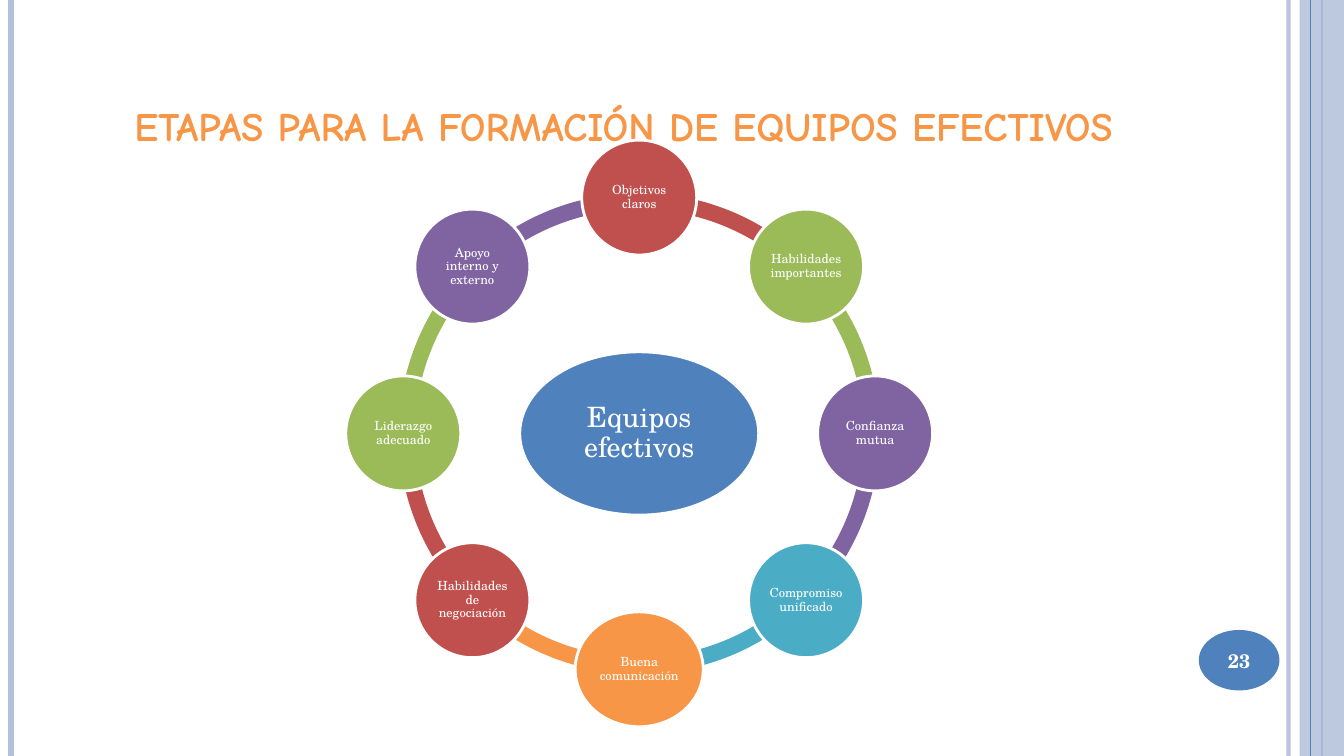
from math import cos, radians, sin

from lxml.etree import SubElement
from pptx import Presentation
from pptx.dml.color import RGBColor
from pptx.enum.shapes import MSO_CONNECTOR, MSO_SHAPE
from pptx.enum.text import MSO_ANCHOR, PP_ALIGN
from pptx.oxml.ns import qn
from pptx.util import Inches, Pt

WHITE = RGBColor(0xFF, 0xFF, 0xFF)
BLUE = RGBColor(0x4F, 0x81, 0xBD)
PALE_BLUE = RGBColor(0xB3, 0xC1, 0xDB)
RED = RGBColor(0xC0, 0x50, 0x4D)
GREEN = RGBColor(0x9B, 0xBB, 0x59)
PURPLE = RGBColor(0x80, 0x64, 0xA2)
TEAL = RGBColor(0x4B, 0xAC, 0xC6)
ORANGE = RGBColor(0xF7, 0x96, 0x46)
SERIF, COMIC = "TeX Gyre Schola", "Comic Neue"

TITLE = "etapas para la formación de equipos efectivos"
GOAL = "Equipos efectivos"
PAGE = "23"
STAGES = [
    ("Objetivos claros", RED, 1.14),
    ("Habilidades importantes", GREEN, 1.14),
    ("Confianza mutua", PURPLE, 1.14),
    ("Compromiso unificado", TEAL, 1.14),
    ("Buena comunicación", ORANGE, 1.27),
    ("Habilidades de negociación", RED, 1.14),
    ("Liderazgo adecuado", GREEN, 1.14),
    ("Apoyo interno y externo", PURPLE, 1.14),
]
BACK_STRIPES = [(12.78, PALE_BLUE, 3, 93), (0.11, PALE_BLUE, 4.5, 100), (13.11, BLUE, 1.5, 100)]
FRONT_STRIPES = [(13, BLUE, 0.75, 100)]

WIDTH, HEIGHT = 13.33, 7.5
CENTER_X, CENTER_Y = 6.34, 4.3
ORBIT, RING_SIZE, STAGE_HEIGHT = 2.34, 4.77, 1.14
FULL_TURN, TOP = 216, 162
STEP = FULL_TURN / len(STAGES)

deck = Presentation()
deck.slide_width, deck.slide_height = Inches(WIDTH), Inches(HEIGHT)
slide = deck.slides.add_slide(deck.slide_layouts[6])
shapes = slide.shapes


def set_opacity(shape, percent):
    color = next(shape._element.spPr.iter(qn("a:srgbClr")))
    SubElement(color, qn("a:alpha")).set("val", str(percent * 1000))


def add_stripe(x, color, weight, opacity):
    stripe = shapes.add_connector(MSO_CONNECTOR.STRAIGHT, Inches(x), 0, Inches(x), Inches(HEIGHT))
    stripe.line.color.rgb = color
    stripe.line.width = Pt(weight)
    set_opacity(stripe, opacity)
    SubElement(stripe._element.spPr, qn("a:effectLst"))


def add_filled(kind, x, y, width, height, color):
    shape = shapes.add_shape(kind, Inches(x), Inches(y), Inches(width), Inches(height))
    shape.shadow.inherit = False
    shape.fill.solid()
    shape.fill.fore_color.rgb = color
    shape.line.fill.background()
    return shape


def write(shape, text, size, font, color, bold=False, inset=0.01, anchor=MSO_ANCHOR.MIDDLE):
    frame = shape.text_frame
    frame.text = text
    frame.word_wrap = True
    frame.vertical_anchor = anchor
    frame.margin_left = frame.margin_right = Inches(inset)
    frame.margin_top = frame.margin_bottom = Inches(inset)
    paragraph = frame.paragraphs[0]
    paragraph.alignment = PP_ALIGN.CENTER
    run = paragraph.runs[0]
    run.font.size, run.font.name, run.font.bold = Pt(size), font, bold
    run.font.color.rgb = color
    return paragraph


def add_bubble(text, x, y, width, height, color, size, inset):
    bubble = add_filled(MSO_SHAPE.OVAL, x - width / 2, y - height / 2, width, height, color)
    bubble.line.color.rgb = WHITE
    bubble.line.width = Pt(2)
    write(bubble, text, size, SERIF, WHITE, inset=inset).line_spacing = 0.9


for stripe in BACK_STRIPES:
    add_stripe(*stripe)
band = add_filled(MSO_SHAPE.RECTANGLE, 12.89, 0, 0.44, HEIGHT, PALE_BLUE)
set_opacity(band, 87)
for stripe in FRONT_STRIPES:
    add_stripe(*stripe)

badge = add_filled(MSO_SHAPE.OVAL, 11.89, 6.25, 0.8, 0.6, BLUE)
write(badge, PAGE, 14, SERIF, WHITE, bold=True)

heading = shapes.add_textbox(Inches(0.74), Inches(0.3), Inches(10.89), Inches(1.25))
heading_line = write(heading, TITLE, 36, COMIC, ORANGE, True, 0.05, MSO_ANCHOR.BOTTOM)
heading_line.runs[0].font._element.set("cap", "small")

for index, (_, color, _) in enumerate(STAGES):
    arc = add_filled(MSO_SHAPE.BLOCK_ARC, CENTER_X - RING_SIZE / 2, CENTER_Y - RING_SIZE / 2,
                     RING_SIZE, RING_SIZE, color)
    start = TOP + STEP * index
    arc.adjustments[0] = start % FULL_TURN
    arc.adjustments[1] = (start + STEP) % FULL_TURN
    arc.adjustments[2] = 0.034

add_bubble(GOAL, CENTER_X, CENTER_Y, 2.37, 1.62, BLUE, 20, 0.03)
for index, (stage, color, width) in enumerate(STAGES):
    angle = radians(360 / len(STAGES) * index - 90)
    add_bubble(stage, CENTER_X + ORBIT * cos(angle), CENTER_Y + ORBIT * sin(angle),
               width, STAGE_HEIGHT, color, 9, 0.01)

deck.save("out.pptx")
